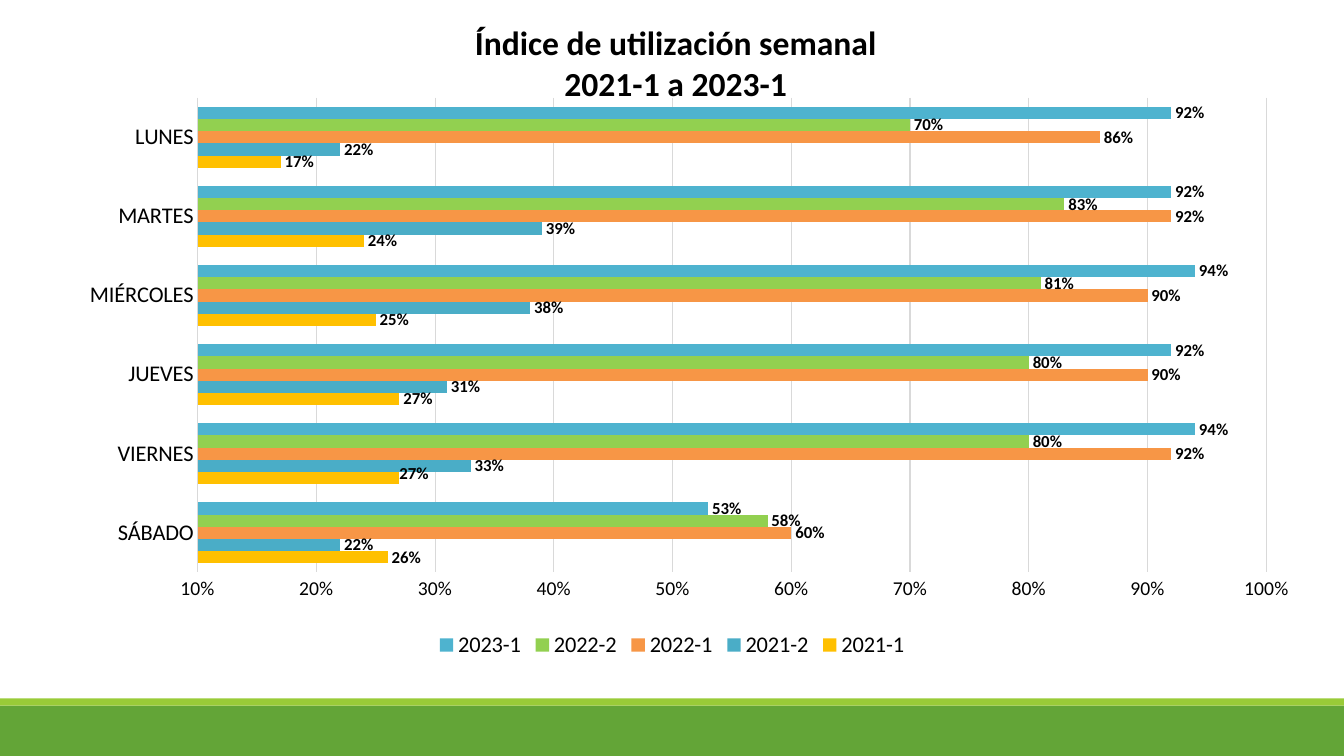
import lxml.etree
import pptx
import pptx.chart.data
import pptx.dml.color
import pptx.enum.chart
import pptx.enum.shapes
import pptx.oxml.ns
import pptx.util

RGBColor = pptx.dml.color.RGBColor
BLACK = RGBColor(0x00, 0x00, 0x00)
GRID_GRAY = RGBColor(0xD9, 0xD9, 0xD9)
DARK_GREEN = RGBColor(0x63, 0xA5, 0x37)
LIGHT_GREEN = RGBColor(0x99, 0xCB, 0x38)
YELLOW = RGBColor(0xFF, 0xC0, 0x00)
BLUE = RGBColor(0x4A, 0xAD, 0xC7)
ORANGE = RGBColor(0xF7, 0x96, 0x46)
LIME = RGBColor(0x92, 0xD0, 0x50)
SKY = RGBColor(0x4E, 0xB3, 0xCF)

WIDTH, HEIGHT = 1333, 750
CHART_WIDTH, CHART_HEIGHT = 1297, 661
TITLE = "Índice de utilización semanal\n2021-1 a 2023-1"
DAYS = ["SÁBADO", "VIERNES", "JUEVES", "MIÉRCOLES", "MARTES", "LUNES"]
SEMESTERS = [
    ("2021-1", YELLOW, [0.26, 0.27, 0.27, 0.25, 0.24, 0.17]),
    ("2021-2", BLUE, [0.22, 0.33, 0.31, 0.38, 0.39, 0.22]),
    ("2022-1", ORANGE, [0.60, 0.92, 0.90, 0.90, 0.92, 0.86]),
    ("2022-2", LIME, [0.58, 0.80, 0.80, 0.81, 0.83, 0.70]),
    ("2023-1", SKY, [0.53, 0.94, 0.92, 0.94, 0.92, 0.92]),
]


def px(length):
    return pptx.util.Emu(length * 9144)


class SlideBuilder:
    """Draws styled elements on one slide, with lengths in px."""

    font_name = "Calibri"

    def __init__(self, slide):
        self.slide = slide

    def style_font(self, font, size, bold=False):
        font.name = self.font_name
        font.size = pptx.util.Pt(size)
        font.bold = bold
        font.color.rgb = BLACK

    def band(self, top, height, color):
        shape = self.slide.shapes.add_shape(
            pptx.enum.shapes.MSO_SHAPE.RECTANGLE, 0, px(top), px(WIDTH), px(height))
        shape.shadow.inherit = False
        shape.fill.solid()
        shape.fill.fore_color.rgb = color
        shape.line.fill.background()

    def place(self, element, index, **fractions):
        qn = pptx.oxml.ns.qn
        for old_layout in element.findall(qn("c:layout")):
            element.remove(old_layout)
        layout = lxml.etree.Element(qn("c:layout"))
        manual = lxml.etree.SubElement(layout, qn("c:manualLayout"))
        for name, value in fractions.items():
            lxml.etree.SubElement(manual, qn("c:" + name)).set("val", str(value))
        element.insert(index, layout)

    def bar_chart(self, left, top, width, height):
        data = pptx.chart.data.CategoryChartData(number_format="0%")
        data.categories = DAYS
        for name, _, values in SEMESTERS:
            data.add_series(name, values)
        chart = self.slide.shapes.add_chart(
            pptx.enum.chart.XL_CHART_TYPE.BAR_CLUSTERED,
            px(left), px(top), px(width), px(height), data).chart
        self.style_font(chart.font, 10)
        plot = chart.plots[0]
        plot.gap_width = 150
        plot.overlap = 0
        plot.vary_by_categories = False
        for series, (_, color, _) in zip(plot.series, SEMESTERS):
            self.style_series(series, color)
        self.chart_title(chart)
        self.axes(chart)
        chart.has_legend = True
        chart.legend.position = pptx.enum.chart.XL_LEGEND_POSITION.BOTTOM
        chart.legend.include_in_layout = False
        self.style_font(chart.legend.font, 16)
        plot_area = chart.element.xpath("c:chart/c:plotArea")[0]
        self.place(plot_area, 0, layoutTarget="inner", xMode="edge", yMode="edge",
                   x=178 / width, y=100 / height, w=1060 / width, h=471 / height)
        return chart

    def style_series(self, series, color):
        series.format.fill.solid()
        series.format.fill.fore_color.rgb = color
        series.invert_if_negative = False
        labels = series.data_labels
        labels.show_value = True
        labels.number_format = "0%"
        labels.number_format_is_linked = False
        labels.position = pptx.enum.chart.XL_LABEL_POSITION.OUTSIDE_END
        self.style_font(labels.font, 12, True)

    def chart_title(self, chart):
        chart.has_title = True
        frame = chart.chart_title.text_frame
        frame.text = TITLE
        for paragraph in frame.paragraphs:
            self.style_font(paragraph.font, 24, True)
        title = chart.element.xpath("c:chart/c:title")[0]
        self.place(title, 1, xMode="edge", yMode="edge",
                   x=450 / CHART_WIDTH, y=22 / CHART_HEIGHT)

    def axes(self, chart):
        for axis, size in ((chart.category_axis, 16), (chart.value_axis, 14)):
            axis.major_tick_mark = pptx.enum.chart.XL_TICK_MARK.NONE
            axis.minor_tick_mark = pptx.enum.chart.XL_TICK_MARK.NONE
            axis.format.line.fill.background()
            self.style_font(axis.tick_labels.font, size)
        axis = chart.value_axis
        axis.minimum_scale, axis.maximum_scale, axis.major_unit = 0.1, 1, 0.1
        axis.tick_labels.number_format = "0%"
        axis.tick_labels.number_format_is_linked = False
        axis.has_major_gridlines = True
        axis.major_gridlines.format.line.color.rgb = GRID_GRAY
        axis.major_gridlines.format.line.width = pptx.util.Pt(0.75)

    def nudge_label(self, chart, series_index, day_index, right, down):
        series = chart.plots[0].series[series_index]
        label = series.points[day_index].data_label
        label.position = pptx.enum.chart.XL_LABEL_POSITION.OUTSIDE_END
        self.style_font(label.font, 12, True)
        element = series.data_labels._element.xpath("c:dLbl")[0]
        self.place(element, 1, x=right / CHART_WIDTH, y=down / CHART_HEIGHT)


def main():
    presentation = pptx.Presentation()
    presentation.slide_width = px(WIDTH)
    presentation.slide_height = px(HEIGHT)
    slide = presentation.slides.add_slide(presentation.slide_layouts[6])
    builder = SlideBuilder(slide)
    builder.band(700, 50, DARK_GREEN)
    builder.band(693, 7, LIGHT_GREEN)
    chart = builder.bar_chart(18, -3, CHART_WIDTH, CHART_HEIGHT)
    builder.nudge_label(chart, 0, DAYS.index("VIERNES"), -4, -4)
    presentation.save("out.pptx")


if __name__ == "__main__":
    main()
